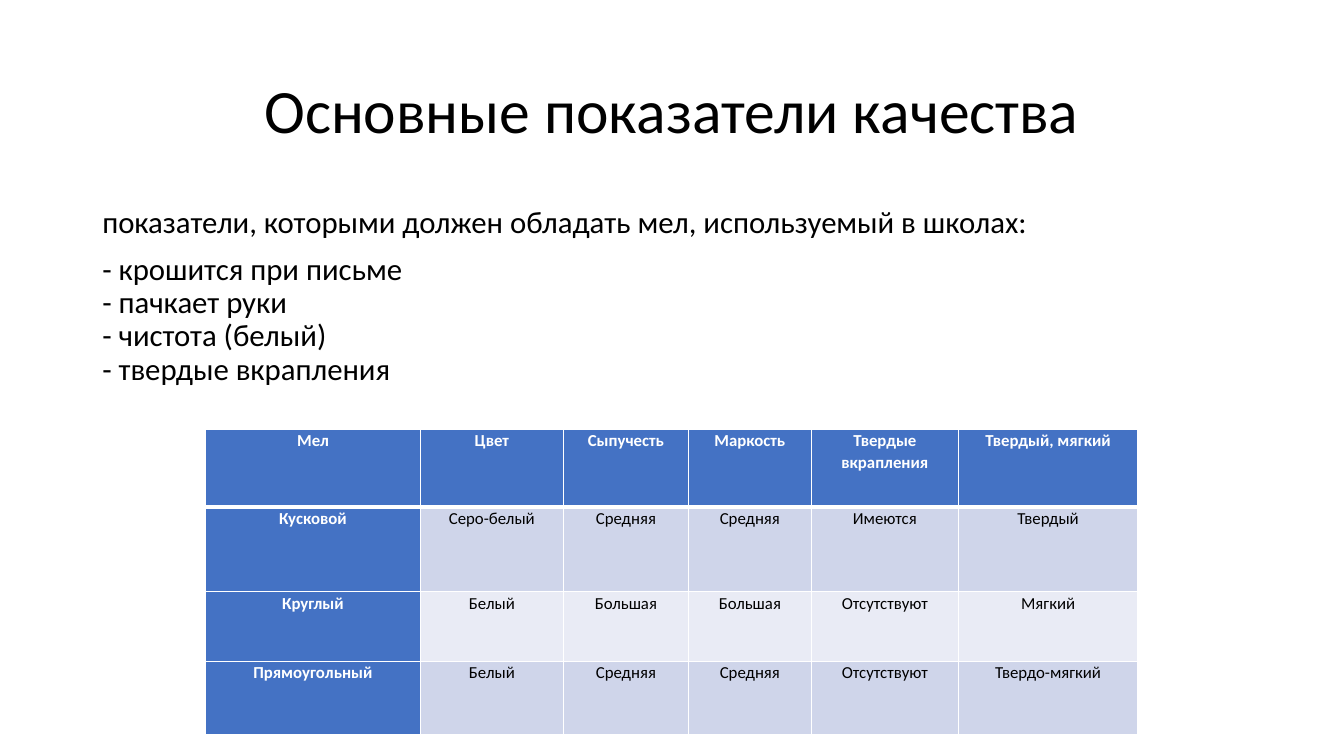
import pptx
import pptx.dml.color
import pptx.enum.text
import pptx.oxml
import pptx.oxml.ns
import pptx.util

BLACK = pptx.dml.color.RGBColor(0x00, 0x00, 0x00)
WHITE = pptx.dml.color.RGBColor(0xFF, 0xFF, 0xFF)
BLUE = pptx.dml.color.RGBColor(0x44, 0x72, 0xC4)
DARK_BAND = pptx.dml.color.RGBColor(0xCF, 0xD5, 0xEA)
LIGHT_BAND = pptx.dml.color.RGBColor(0xE9, 0xEB, 0xF5)
CENTER = pptx.enum.text.PP_ALIGN.CENTER
LEFT = pptx.enum.text.PP_ALIGN.LEFT
Pt = pptx.util.Pt


def write_text(paragraph, text, size, color=BLACK, bold=False, align=LEFT, spacing=0.9, before=0):
    paragraph.alignment = align
    paragraph.line_spacing = spacing
    paragraph.space_before = Pt(before)
    for index, line in enumerate(text.splitlines()):
        if index:
            paragraph.add_line_break()
        run = paragraph.add_run()
        run.text = line
        run.font.name = "Calibri"
        run.font.size = Pt(size)
        run.font.bold = bold
        run.font.color.rgb = color


def set_border(cell, side, width):
    cell.get_or_add_tcPr() if hasattr(cell, "get_or_add_tcPr") else None
    properties = cell._tc.get_or_add_tcPr()
    properties.append(pptx.oxml.parse_xml(
        f'<a:{side} {pptx.oxml.ns.nsdecls("a")} w="{Pt(width)}">'
        f'<a:solidFill><a:srgbClr val="{WHITE}"/></a:solidFill></a:{side}>'
    ))


presentation = pptx.Presentation()
presentation.slide_width = Pt(960)
presentation.slide_height = Pt(540)
slide = presentation.slides.add_slide(presentation.slide_layouts[6])

title = slide.shapes.add_textbox(Pt(66), Pt(28.8), Pt(828), Pt(104.4)).text_frame
title.word_wrap = True
title.vertical_anchor = pptx.enum.text.MSO_ANCHOR.MIDDLE
write_text(title.paragraphs[0], "Основные показатели качества", size=44, align=CENTER)

requirements = slide.shapes.add_textbox(Pt(66), Pt(144), Pt(828), Pt(342.7)).text_frame
requirements.word_wrap = True
write_text(
    requirements.paragraphs[0],
    "показатели, которыми должен обладать мел, используемый в школах:",
    size=22,
)
write_text(
    requirements.add_paragraph(),
    """- крошится при письме
- пачкает руки
- чистота (белый)
- твердые вкрапления""",
    size=22,
    before=10,
)

chalk_rows = [
    ["Мел", "Цвет", "Сыпучесть", "Маркость", "Твердые вкрапления", "Твердый, мягкий"],
    ["Кусковой", "Серо-белый", "Средняя", "Средняя", "Имеются", "Твердый"],
    ["Круглый", "Белый", "Большая", "Большая", "Отсутствуют", "Мягкий"],
    ["Прямоугольный", "Белый", "Средняя", "Средняя", "Отсутствуют", "Твердо-мягкий"],
]
column_widths = [153.4, 102.2, 89.3, 87.8, 105.1, 128.2]
row_heights = [55.4, 60.5, 49.7, 52.6]

table = slide.shapes.add_table(
    len(row_heights), len(column_widths),
    Pt(146.9), Pt(306.7), Pt(sum(column_widths)), Pt(sum(row_heights)),
).table
table.first_col = True
for column, width in zip(table.columns, column_widths):
    column.width = Pt(width)

for row_index, (row, height, texts) in enumerate(zip(table.rows, row_heights, chalk_rows)):
    row.height = Pt(height)
    for column_index, (cell, text) in enumerate(zip(row.cells, texts)):
        is_header = row_index == 0 or column_index == 0
        cell.margin_left = cell.margin_right = Pt(5)
        cell.margin_top = cell.margin_bottom = Pt(0)
        set_border(cell, "lnL", 1)
        set_border(cell, "lnR", 1)
        set_border(cell, "lnT", 3 if row_index == 1 else 1)
        set_border(cell, "lnB", 3 if row_index == 0 else 1)
        cell.fill.solid()
        band = DARK_BAND if row_index % 2 else LIGHT_BAND
        cell.fill.fore_color.rgb = BLUE if is_header else band
        write_text(
            cell.text_frame.paragraphs[0], text, size=12,
            color=WHITE if is_header else BLACK,
            bold=is_header, align=CENTER, spacing=1.07,
        )

presentation.save("out.pptx")
